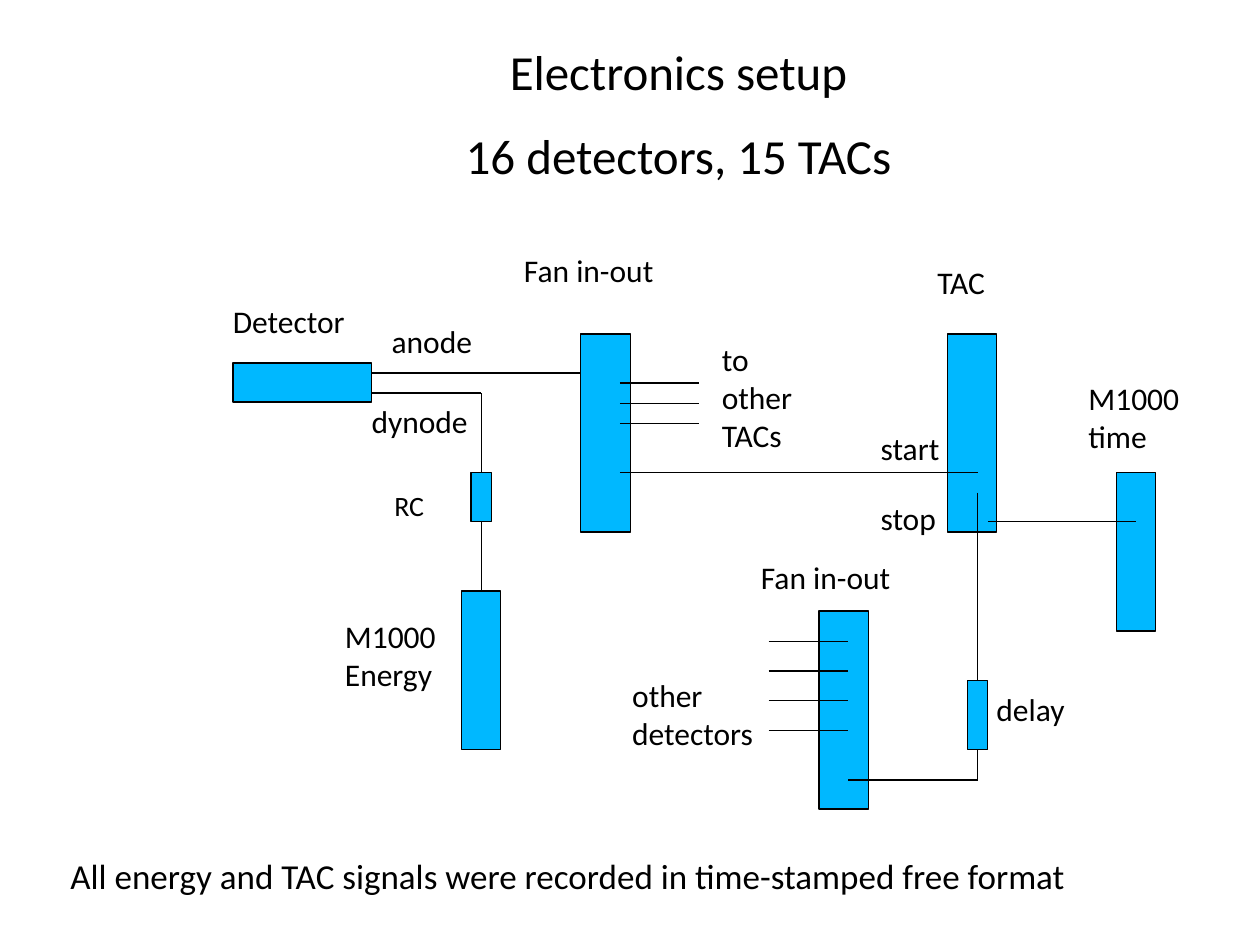
from dataclasses import dataclass
from typing import Any

from lxml import etree
from pptx import Presentation
from pptx.dml.color import RGBColor
from pptx.enum.shapes import MSO_CONNECTOR, MSO_SHAPE
from pptx.enum.text import MSO_ANCHOR, MSO_AUTO_SIZE, PP_ALIGN
from pptx.oxml.ns import qn
from pptx.util import Pt

RECTANGLE = MSO_SHAPE.RECTANGLE
STRAIGHT = MSO_CONNECTOR.STRAIGHT
TOP_ANCHOR = MSO_ANCHOR.TOP
NO_RESIZE = MSO_AUTO_SIZE.NONE
LEFT, CENTER = PP_ALIGN.LEFT, PP_ALIGN.CENTER
TOP_SIDE, BOTTOM_SIDE = 0, 2
BLUE, BLACK = "00B8FF", "000000"
TALL = (28.3, 113.2)
READOUT = (22.4, 90.7)


def color(value):
    return RGBColor.from_string(value)


def set_values(target, values):
    for name, value in values.items():
        setattr(target, name, value)


def draw_outline(line):
    line.color.rgb = color(BLACK)
    line.width = Pt(0.75)


def write_text(box, lines, size, align=LEFT, gap=0):
    frame = box.text_frame
    set_values(frame, {"word_wrap": True, "auto_size": NO_RESIZE,
                       "vertical_anchor": TOP_ANCHOR})
    for index, text in enumerate(lines):
        para = frame.add_paragraph() if index else frame.paragraphs[0]
        set_values(para, {"alignment": align, "space_before": Pt(gap if index else 0)})
        span = para.add_run()
        span.text = text
        set_values(span.font, {"name": "Calibri", "size": Pt(size)})
        span.font.color.rgb = color(BLACK)


@dataclass
class Region:
    page: Any
    left: float
    top: float
    width: float
    height: float

    def block(self, x, y, size):
        width, height = size
        box = self.page.shapes.add_shape(
            RECTANGLE, Pt(self.left + x), Pt(self.top + y), Pt(width), Pt(height))
        box.shadow.inherit = False
        box.fill.solid()
        box.fill.fore_color.rgb = color(BLUE)
        draw_outline(box.line)
        return box

    def wire(self, x1, y1, x2, y2):
        line = self.page.shapes.add_connector(
            STRAIGHT, Pt(self.left + x1), Pt(self.top + y1),
            Pt(self.left + x2), Pt(self.top + y2))
        draw_outline(line.line)
        etree.SubElement(line._element.spPr, qn("a:effectLst"))
        return line

    def label(self, x, y, width, *lines, size=18):
        height = 7.2 + 21.6 * len(lines)
        box = self.page.shapes.add_textbox(
            Pt(self.left + x), Pt(self.top + y), Pt(width), Pt(height))
        write_text(box, lines, size)


def add_title(region):
    title = region.page.shapes.title
    set_values(title, {"left": Pt(region.left), "top": Pt(region.top),
                       "width": Pt(region.width), "height": Pt(region.height)})
    write_text(title, ["Electronics setup", "16 detectors, 15 TACs"], 28, CENTER, 14)


def add_detector_chain(region):
    detector_right, axis = 86.4, 149
    region.block(7.2, 38.4, (79.2, 22.3))
    filter_box = region.block(axis - 5.8, 101, (11.6, 28.1))
    energy_box = region.block(axis - 11.2, 168.7, READOUT)
    region.wire(detector_right, 44.1, region.width, 44.1)
    region.wire(detector_right, 55.6, axis, 55.6)
    region.wire(axis, 55.6, axis, 101).end_connect(filter_box, TOP_SIDE)
    link = region.wire(axis, 129.1, axis, 168.7)
    link.begin_connect(filter_box, BOTTOM_SIDE)
    link.end_connect(energy_box, TOP_SIDE)
    region.label(0, 0, 83, "Detector")
    region.label(90.7, 11.7, 65, "anode")
    region.label(79.2, 57, 73, "dynode")
    region.label(92.2, 106.8, 38, "RC", size=16)
    region.label(64, 180.2, 71, "M1000", "Energy")


def add_start_branch(region):
    block_top, fan_output = 51.1, 61.9
    region.block(39.6, block_top, TALL)
    region.block(249.1, block_top, TALL)
    for index in range(3):
        y = 79.2 + 11.5 * index
        region.wire(fan_output, y, fan_output + 45.4, y)
    region.wire(fan_output, 130.3, region.width, 130.3)
    region.label(0, 0, 96, "Fan in-out")
    region.label(236.2, 7.2, 51, "TAC")
    region.label(113.1, block_top, 80, "to", "other TACs")
    region.label(203.8, 102.2, 54, "start")
    region.label(203.8, 141.8, 54, "stop")


def add_stop_branch(region):
    fan_input, axis, bottom = 130.4, 204.5, 130.3
    region.block(113.8, 33.8, TALL)
    for index in range(4):
        y = 51.1 + 17 * index
        region.wire(fan_input - 45.4, y, fan_input, y)
    region.wire(fan_input, bottom, axis, bottom)
    region.wire(axis, -33.9, axis, bottom)
    region.block(axis - 5.8, 73.4, (11.6, 39.6))
    region.label(73.5, 0, 96, "Fan in-out")
    region.label(0, 67.6, 90.7, "other detectors")
    region.label(208.1, 75.6, 60, "delay")


def add_time_readout(region):
    region.block(73.4, 56.9, READOUT)
    region.wire(0, 85, 84.9, 85)
    region.label(50.4, 0, 68, "M1000", "time")


def add_caption(region):
    region.label(0, 0, region.width,
                 "All energy and TAC signals were recorded in time-stamped free format",
                 size=20)


def main():
    deck = Presentation()
    deck.slide_width, deck.slide_height = Pt(720), Pt(540)
    page = deck.slides.add_slide(deck.slide_layouts[5])
    add_title(Region(page, 87.1, 20.2, 601.2, 91.4))
    add_detector_chain(Region(page, 126, 169, 216.7, 259.4))
    add_start_branch(Region(page, 292.3, 139.7, 266.4, 170.6))
    add_stop_branch(Region(page, 354.2, 315.4, 268, 147))
    add_time_readout(Region(page, 564.5, 213.1, 118, 147.6))
    add_caption(Region(page, 33.1, 484.6, 648.7, 31.7))
    deck.save("out.pptx")


if __name__ == "__main__":
    main()
